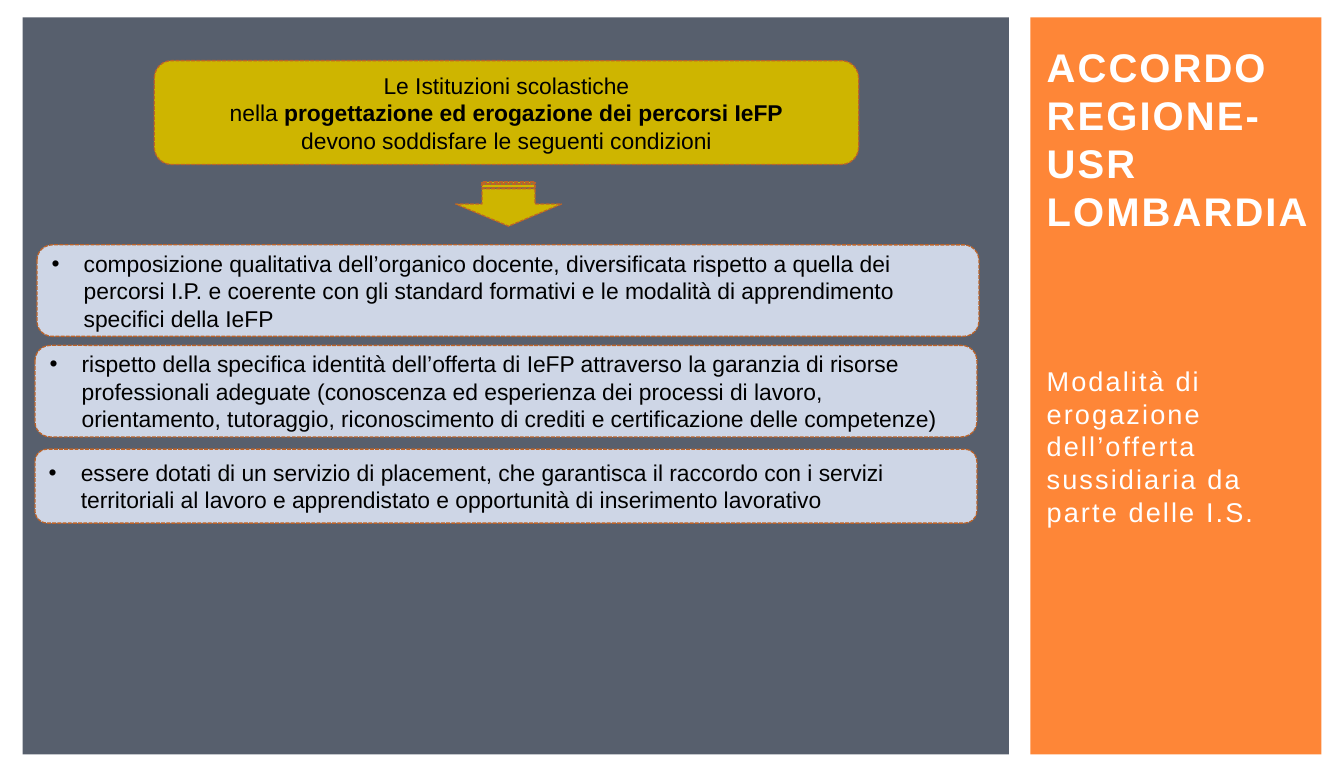
from dataclasses import dataclass
from typing import Any, NamedTuple

from lxml import etree
from pptx import Presentation
from pptx import util as u
from pptx.dml import color
from pptx.enum import dml, shapes, text
from pptx.oxml import ns

WHITE, BLACK = "FFFFFF", "000000"
ORANGE, SLATE = "FE8637", "575F6D"
GOLD, PALE_BLUE, BROWN = "CEB500", "CED6E6", "BC6329"
INDENT = 22.5


class Box(NamedTuple):
    left: float
    top: float
    width: float
    height: float


@dataclass
class Block:
    box: Box
    fill: str
    kind: Any = shapes.MSO_SHAPE.ROUNDED_RECTANGLE
    outlined: bool = True
    rotation: float = 0


@dataclass
class Style:
    size: float = 16
    color: str = BLACK
    bold: bool = False
    spacing: float = 0
    align: Any = text.PP_ALIGN.LEFT
    anchor: Any = text.MSO_ANCHOR.MIDDLE
    bullet: bool = False


PANELS = [
    Block(Box(721.5, 12.25, 203.75, 516.25), ORANGE, shapes.MSO_SHAPE.RECTANGLE, False),
    Block(Box(15.85, 12.25, 690.5, 516.25), SLATE, shapes.MSO_SHAPE.RECTANGLE, False),
]
PREMISE = Block(Box(108, 42.5, 493.2, 72.7), GOLD)
PREMISE_LINES = [
    [("Le Istituzioni scolastiche", False)],
    [("nella ", False), ("progettazione ed erogazione dei percorsi IeFP", True)],
    [("devono soddisfare le seguenti condizioni", False)],
]
ARROW = Block(Box(340.55, 105.85, 31, 74.15), GOLD,
              shapes.MSO_SHAPE.STRIPED_RIGHT_ARROW, rotation=90)
CONDITIONS = [
    (Box(25.9, 171.5, 659.5, 64.1),
     "composizione qualitativa dell’organico docente, diversificata rispetto a quella dei "
     "percorsi I.P. e coerente con gli standard formativi e le modalità di apprendimento "
     "specifici della IeFP"),
    (Box(24.5, 241.9, 659.5, 64.1),
     "rispetto della specifica identità dell’offerta di IeFP attraverso la garanzia di risorse "
     "professionali adeguate (conoscenza ed esperienza dei processi di lavoro, "
     "orientamento, tutoraggio, riconoscimento di crediti e certificazione delle competenze)"),
    (Box(24.5, 314.6, 659.5, 51.8),
     "essere dotati di un servizio di placement, che garantisca il raccordo con i servizi "
     "territoriali al lavoro e apprendistato e opportunità di inserimento lavorativo"),
]
TITLE_BOX = Box(725.75, 26.5, 215.25, 141.5)
SUBTITLE_BOX = Box(725.75, 250.5, 203.75, 124)


def rgb(value: str) -> color.RGBColor:
    return color.RGBColor.from_string(value)


def apply(target: Any, values: dict[str, Any]) -> None:
    for name, value in values.items():
        setattr(target, name, value)


def place(box: Box) -> list[int]:
    return [u.Pt(length) for length in box]


def add_block(slide: Any, block: Block) -> Any:
    shape = slide.shapes.add_shape(block.kind, *place(block.box))
    shape.rotation = block.rotation
    shape.shadow.inherit = False
    shape.fill.solid()
    shape.fill.fore_color.rgb = rgb(block.fill)
    if block.outlined:
        shape.line.color.rgb = rgb(BROWN)
        apply(shape.line, {"width": u.Pt(0.9), "dash_style": dml.MSO_LINE.SQUARE_DOT})
    else:
        shape.line.fill.background()
    return shape


def add_bullet(paragraph: Any) -> None:
    properties = paragraph._p.get_or_add_pPr()
    properties.set("marL", str(u.Pt(INDENT)))
    properties.set("indent", str(-u.Pt(INDENT)))
    etree.SubElement(properties, ns.qn("a:buFont")).set("typeface", "Arial")
    etree.SubElement(properties, ns.qn("a:buChar")).set("char", "•")


def write(shape: Any, lines: list[list[tuple[str, bool]]], style: Style) -> None:
    frame = shape.text_frame
    apply(frame, {"word_wrap": True, "vertical_anchor": style.anchor})
    for index, line in enumerate(lines):
        paragraph = frame.add_paragraph() if index else frame.paragraphs[0]
        paragraph.alignment = style.align
        if style.bullet:
            add_bullet(paragraph)
        for words, bold in line:
            run = paragraph.add_run()
            run.text = words
            apply(run.font, {"name": "Arial", "size": u.Pt(style.size),
                             "bold": bold or style.bold})
            run.font.color.rgb = rgb(style.color)
            if style.spacing:
                run._r.get_or_add_rPr().set("spc", str(round(style.spacing * 100)))


def add_text(slide: Any, box: Box, words: str, style: Style) -> None:
    write(slide.shapes.add_textbox(*place(box)), [[(words, False)]], style)


def main() -> None:
    presentation = Presentation()
    apply(presentation, {"slide_width": u.Pt(941), "slide_height": u.Pt(540)})
    slide = presentation.slides.add_slide(presentation.slide_layouts[6])
    for panel in PANELS:
        add_block(slide, panel)
    add_text(slide, TITLE_BOX, "ACCORDO REGIONE-USR LOMBARDIA",
             Style(28, WHITE, True, 1.5, anchor=text.MSO_ANCHOR.TOP))
    add_text(slide, SUBTITLE_BOX,
             "Modalità di erogazione dell’offerta sussidiaria da parte delle I.S.",
             Style(19, WHITE, spacing=1.5))
    write(add_block(slide, PREMISE), PREMISE_LINES, Style(align=text.PP_ALIGN.CENTER))
    add_block(slide, ARROW)
    for box, words in CONDITIONS:
        write(add_block(slide, Block(box, PALE_BLUE)), [[(words, False)]], Style(bullet=True))
    presentation.save("out.pptx")


if __name__ == "__main__":
    main()
